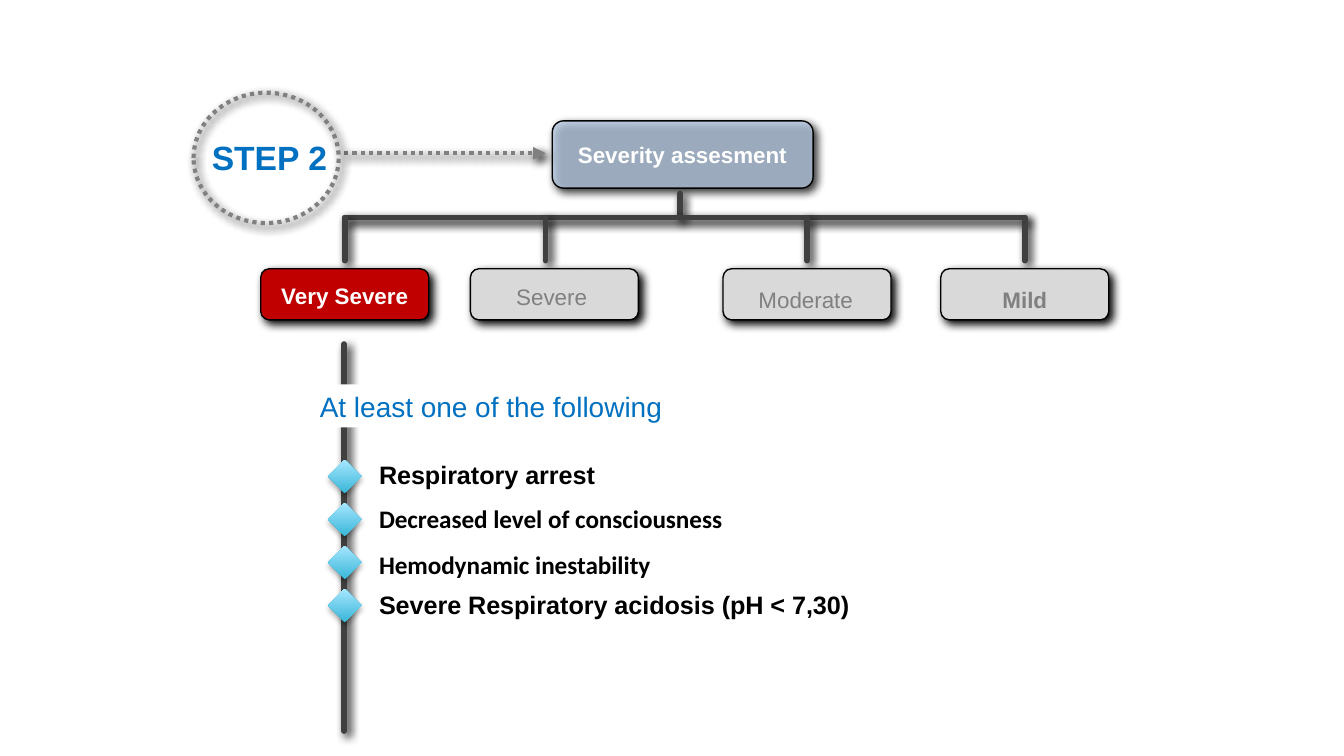
from lxml import etree
from pptx import Presentation
from pptx.dml.color import RGBColor
from pptx.enum.dml import MSO_LINE
from pptx.enum.shapes import MSO_CONNECTOR, MSO_SHAPE
from pptx.enum.text import MSO_ANCHOR, MSO_AUTO_SIZE, PP_ALIGN
from pptx.oxml.ns import qn
from pptx.util import Inches, Pt

# Content
STEP = "STEP 2"
TITLE = "Severity assesment"
HEADING = "At least one of the following"
# label, box left, label left, label top, fill, text colour, bold
LEVELS = [
    ("Very Severe", 1.94, 1.97, 2.06, "C00000", "FFFFFF", True),
    ("Severe", 3.5, 3.51, 2.07, "D9D9D9", "808080", False),
    ("Moderate", 5.38, 5.4, 2.09, "D9D9D9", "808080", False),
    ("Mild", 7, 7.03, 2.09, "D9D9D9", "808080", True),
]
# criterion, text top, font
CRITERIA = [
    ("Respiratory arrest", 3.38, "Arial"),
    ("Decreased level of consciousness", 3.71, "Calibri"),
    ("Hemodynamic inestability", 4.05, "Calibri"),
    ("Severe Respiratory acidosis (pH < 7,30)", 4.35, "Arial"),
]

# Layout
LEVEL_TOP, LEVEL_WIDTH, LEVEL_HEIGHT = 2, 1.25, 0.38
BRANCH_TOP, BRANCH_BOTTOM = 1.62, 1.94
TRUNK_X, TITLE_X = 2.56, 5.06
DIAMOND_LEFT, DIAMOND_TOP, DIAMOND_SIZE, DIAMOND_STEP = 2.44, 3.42, 0.25, 0.32
DARK, GREY, BLUE = "404040", "808080", "0070C0"
# opacity %, blur pt, distance pt, direction in degrees
HARD_SHADOW = (100, 5, 2.8, 45)
SOFT_SHADOW = (35, 3.1, 1.8, 90)


def rgb(value):
    return RGBColor.from_string(value)


def add_alpha(color_element, percent):
    etree.SubElement(color_element, qn("a:alpha"), val=str(percent * 1000))


def add_shadow(shape, opacity, blur, distance, direction):
    properties = shape._element.spPr
    effects = properties.find(qn("a:effectLst"))
    if effects is None:
        effects = etree.SubElement(properties, qn("a:effectLst"))
    shadow = etree.SubElement(
        effects, qn("a:outerShdw"), blurRad=str(Pt(blur)), dist=str(Pt(distance)),
        dir=str(direction * 60000), algn="ctr", rotWithShape="0")
    add_alpha(etree.SubElement(shadow, qn("a:srgbClr"), val="000000"), opacity)


def add_shape(kind, left, top, width, height, fill=None, line=None, line_width=0.75, shadow=None):
    shape = slide.shapes.add_shape(
        kind, Inches(left), Inches(top), Inches(width), Inches(height))
    shape.shadow.inherit = False
    if fill:
        shape.fill.solid()
        shape.fill.fore_color.rgb = rgb(fill)
    else:
        shape.fill.background()
    if line:
        shape.line.color.rgb = rgb(line)
        shape.line.width = Pt(line_width)
    else:
        shape.line.fill.background()
    if shadow:
        add_shadow(shape, *shadow)
    return shape


def add_line(x1, y1, x2, y2, color=DARK, width=3, dash=None, arrow=False):
    connector = slide.shapes.add_connector(
        MSO_CONNECTOR.STRAIGHT, Inches(x1), Inches(y1), Inches(x2), Inches(y2))
    connector.line.color.rgb = rgb(color)
    connector.line.width = Pt(width)
    outline = connector.line._get_or_add_ln()
    if dash:
        connector.line.dash_style = dash
    else:
        outline.set("cap", "rnd")
    if arrow:
        etree.SubElement(outline, qn("a:tailEnd"), type="triangle")
    add_shadow(connector, *HARD_SHADOW)


def write(shape, text, size, color, font="Arial", bold=False,
          align=PP_ALIGN.LEFT, anchor=MSO_ANCHOR.BOTTOM, margins=(0.07, 0.03)):
    frame = shape.text_frame
    frame.word_wrap = True
    frame.auto_size = MSO_AUTO_SIZE.SHAPE_TO_FIT_TEXT
    frame.vertical_anchor = anchor
    frame.margin_left = frame.margin_right = Inches(margins[0])
    frame.margin_top = frame.margin_bottom = Inches(margins[1])
    paragraph = frame.paragraphs[0]
    paragraph.text = text
    paragraph.alignment = align
    paragraph.font.size = Pt(size)
    paragraph.font.name = font
    paragraph.font.bold = bold
    paragraph.font.color.rgb = rgb(color)


def add_text(left, top, width, height, *content, **style):
    box = slide.shapes.add_textbox(
        Inches(left), Inches(top), Inches(width), Inches(height))
    write(box, *content, **style)


# Widescreen slide, 16 to 9
presentation = Presentation()
presentation.slide_width = Inches(10)
presentation.slide_height = Inches(10) * 9 // 16
slide = presentation.slides.add_slide(presentation.slide_layouts[6])

# Title box, step circle and arrow
title_box = add_shape(MSO_SHAPE.ROUNDED_RECTANGLE, 4.11, 0.9, 1.94, 0.5,
                      "B9CDE5", "000000", shadow=HARD_SHADOW)
add_alpha(title_box._element.spPr.find(qn("a:solidFill"))[0], 77)
add_text(4.23, 1.01, 1.76, 0.27, TITLE, 12, "FFFFFF", bold=True)
add_line(TRUNK_X, 1.14, 4.06, 1.14, GREY, 2.25, MSO_LINE.ROUND_DOT, arrow=True)
circle = add_shape(MSO_SHAPE.OVAL, 1.44, 0.69, 1.08, 0.97,
                   line=GREY, line_width=2.25, shadow=HARD_SHADOW)
circle.line.dash_style = MSO_LINE.ROUND_DOT

# Criteria along the trunk
add_line(TRUNK_X, 2.56, TRUNK_X, 5.44)
for index, (criterion, text_top, font) in enumerate(CRITERIA):
    add_text(2.75, text_top, 3.82, 0.29, criterion, 13.5, "000000", font=font, bold=True)
    diamond = add_shape(
        MSO_SHAPE.DIAMOND, DIAMOND_LEFT, DIAMOND_TOP + index * DIAMOND_STEP,
        DIAMOND_SIZE, DIAMOND_SIZE, shadow=SOFT_SHADOW)
    diamond.fill.gradient()
    diamond.fill.gradient_angle = 90
    for stop, color in zip(diamond.fill.gradient_stops, ("39B7D8", "A7E6FF")):
        stop.color.rgb = rgb(color)

# Heading over the trunk
heading = add_shape(MSO_SHAPE.RECTANGLE, 2.31, 2.86, 5.69, 0.32, "FFFFFF")
write(heading, HEADING, 15, BLUE)

# Severity levels and their branches
centers = [left + LEVEL_WIDTH / 2 for _, left, *_ in LEVELS]
add_line(TITLE_X, 1.44, TITLE_X, BRANCH_TOP)
add_line(centers[0], BRANCH_TOP, centers[-1], BRANCH_TOP)
for center, level in zip(centers, LEVELS):
    label, left, label_left, label_top, fill, color, bold = level
    # The second branch stands slightly left of its box's middle
    branch_x = 4.06 if label == "Severe" else center
    add_line(branch_x, BRANCH_TOP, branch_x, BRANCH_BOTTOM)
    add_shape(MSO_SHAPE.ROUNDED_RECTANGLE, left, LEVEL_TOP, LEVEL_WIDTH, LEVEL_HEIGHT,
              fill, "000000", shadow=HARD_SHADOW)
    add_text(label_left, label_top, 1.19, 0.27, label, 12, color,
             bold=bold, align=PP_ALIGN.CENTER)

# Step label
add_text(1.29, 0.97, 1.43, 0.4, STEP, 18, BLUE, bold=True, align=PP_ALIGN.CENTER,
         anchor=MSO_ANCHOR.TOP, margins=(0.1, 0.05))

presentation.save("out.pptx")
